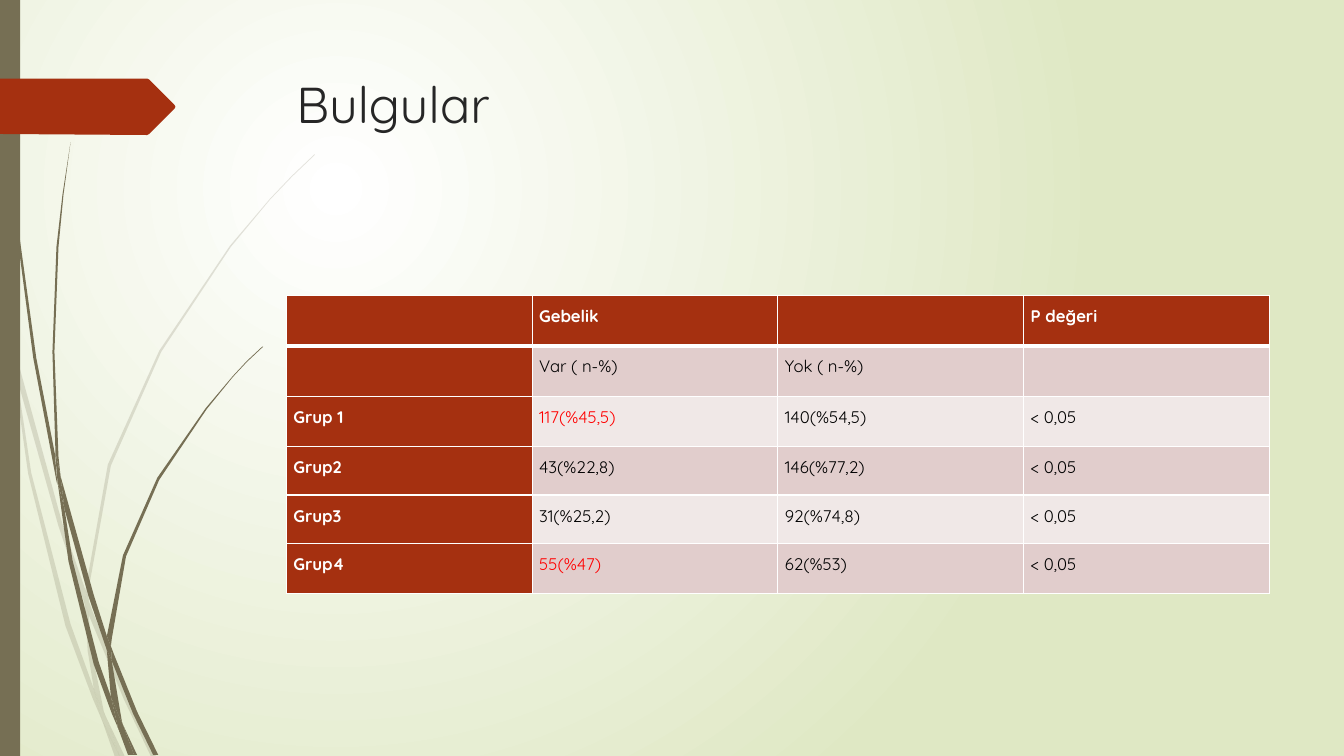
from dataclasses import dataclass

from lxml.etree import SubElement
from pptx import Presentation
from pptx.dml.color import RGBColor as RGB
from pptx.enum.shapes import MSO_SHAPE as Shape
from pptx.enum.text import MSO_ANCHOR as Anchor
from pptx.oxml.ns import qn
from pptx.util import Inches, Pt


@dataclass(frozen=True)
class Theme:
    """Colours, font and type sizes of the slide."""
    font: str = "Quicksand"
    title_size: int = 36
    table_size: int = 12
    olive: str = "766F54"
    rust: str = "A53010"
    title: str = "262626"
    white: str = "FFFFFF"
    black: str = "000000"
    red: str = "FF0000"
    backdrop: str = "DFE8C4"
    bands: tuple = ("F0E8E7", "E1CDCC")


THEME = Theme()

FAINT_GRASS = [
    [(0.11, 3.5), (0.09, 3.22), (0, 2.82), (0, 2.99), (0.1, 3.44)],
    [(0.58, 5.22), (0.84, 5.99), (0.85, 5.86), (0.62, 5.2), (0.14, 3.45), (0.17, 3.76)],
    [(0.92, 6.07), (0.88, 5.96), (0.88, 6.1), (1.23, 6.94), (1.5, 7.51), (1.55, 7.51),
     (1.27, 6.92)],
    [(1.19, 7.51), (1.24, 7.51), (1.05, 7.11)],
    [(0.93, 6.83), (0.7, 6.19), (0.31, 4.69), (0.17, 3.76), (0.11, 3.5), (0.28, 4.7),
     (0.65, 6.21), (0.92, 6.93), (1.01, 7.14), (0.99, 7.07)],
    [(0.84, 5.99), (0.87, 6.46), (0.93, 6.83), (0.96, 6.92), (1.05, 7.11), (1.03, 7.06),
     (0.91, 6.46), (0.88, 6.1), (0.88, 6.08)],
    [(0.88, 5.84), (1.1, 4.62), (1.6, 3.49), (2.29, 2.45), (2.68, 1.98), (2.9, 1.75),
     (3.12, 1.54), (3.12, 1.53), (2.89, 1.75), (2.68, 1.97), (2.28, 2.44), (1.58, 3.48),
     (1.07, 4.61), (0.85, 5.84), (0.85, 5.86), (0.88, 5.96)],
    [(1.01, 7.14), (1.14, 7.51), (1.19, 7.51)],
    [(0.88, 6.08), (0.88, 6.1), (0.88, 5.96), (0.85, 5.86), (0.84, 5.99)],
    [(0.96, 6.92), (0.93, 6.83), (0.99, 7.07), (1.01, 7.14), (1.19, 7.51), (1.05, 7.11)],
]
DARK_GRASS = [
    [(0.07, 1.1), (0.17, 2.33), (0.33, 3.55), (0.56, 4.77), (0.57, 4.81), (0.55, 4.57),
     (0.55, 4.53), (0.36, 3.55), (0.19, 2.32), (0.08, 1.09), (0.05, 0.48), (0.04, 0),
     (0.03, 0), (0.04, 0.48)],
    [(0.88, 5.92), (1.06, 6.45), (1.06, 6.31), (0.93, 5.9), (0.6, 4.72), (0.64, 5.05)],
    [(1.13, 6.49), (1.1, 6.41), (1.11, 6.56), (1.32, 7.08), (1.52, 7.49), (1.57, 7.49),
     (1.36, 7.06)],
    [(1.1, 6.91), (0.98, 6.57), (0.72, 5.56), (0.64, 5.05), (0.57, 4.77), (0.68, 5.57),
     (0.93, 6.59), (1.11, 7.08), (1.17, 7.22), (1.16, 7.17)],
    [(0.6, 4.72), (0.58, 4.53), (0.54, 3.49), (0.58, 2.45), (0.63, 1.93), (0.7, 1.41),
     (0.62, 1.93), (0.56, 2.45), (0.52, 3.49), (0.55, 4.49)],
    [(1.33, 7.49), (1.36, 7.49), (1.22, 7.19)],
    [(0.57, 4.77), (0.64, 5.05), (0.6, 4.72), (0.55, 4.49), (0.55, 4.53)],
    [(1.11, 6.33), (1.25, 5.52), (1.58, 4.76), (2.05, 4.06), (2.31, 3.74), (2.45, 3.59),
     (2.61, 3.44), (2.6, 3.44), (2.45, 3.58), (2.31, 3.73), (2.04, 4.05), (1.56, 4.74),
     (1.22, 5.51), (1.06, 6.31), (1.1, 6.41)],
    [(1.17, 7.22), (1.27, 7.49), (1.31, 7.49)],
    [(1.06, 6.45), (1.1, 6.91), (1.16, 7.06), (1.22, 7.19), (1.21, 7.16), (1.11, 6.56),
     (1.09, 6.51)],
    [(1.06, 6.45), (1.09, 6.51), (1.11, 6.56), (1.1, 6.41), (1.06, 6.31)],
    [(1.16, 7.06), (1.1, 6.91), (1.16, 7.17), (1.17, 7.22), (1.3, 7.49), (1.33, 7.49),
     (1.22, 7.19)],
]
ARROW = [(0, 0), (1.46, 0), (1.48, 0.01), (1.73, 0.26), (1.74, 0.28), (1.73, 0.3),
         (1.48, 0.55), (1.46, 0.56), (0, 0.55)]
RESULTS = [
    ["", "Gebelik", "", "P değeri"],
    ["", "Var ( n-%)", "Yok ( n-%)", ""],
    ["Grup 1", "117(%45,5)", "140(%54,5)", "< 0,05"],
    ["Grup2", "43(%22,8)", "146(%77,2)", "< 0,05"],
    ["Grup3", "31(%25,2)", "92(%74,8)", "< 0,05"],
    ["Grup4", "55(%47)", "62(%53)", "< 0,05"],
]
ROW_HEIGHTS = [0.5, 0.5, 0.5, 0.48, 0.48, 0.5]
HIGHLIGHTS = {(2, 1), (5, 1)}


def set_attributes(target, values):
    """Set every attribute named in a dict of format values."""
    for name, value in values.items():
        setattr(target, name, value)


def paint(shape, color):
    """Give a shape a plain fill without line or shadow."""
    shape.shadow.inherit = False
    shape.fill.solid()
    shape.fill.fore_color.rgb = RGB.from_string(color)
    shape.line.fill.background()


def write(paragraph, text, size, color, bold=False):
    """Add one formatted run to a paragraph."""
    run = paragraph.add_run()
    run.text = text
    set_attributes(run.font, {"name": THEME.font, "size": Pt(size), "bold": bold})
    run.font.color.rgb = RGB.from_string(color)


def add_outline(slide, left, top, points, color):
    """Draw a closed outline with its points measured from left and top."""
    corners = [(Inches(left + x), Inches(top + y)) for x, y in points]
    builder = slide.shapes.build_freeform(*corners[0])
    builder.add_line_segments(corners[1:], close=True)
    shape = builder.convert_to_shape()
    paint(shape, color)
    return shape


def add_grass(slide, left, top, blades, opacity=100):
    """Draw a tuft of grass as one group."""
    shapes = [add_outline(slide, left, top, blade, THEME.olive) for blade in blades]
    if opacity < 100:
        for shape in shapes:
            color = shape.element.spPr.find(qn("a:solidFill"))[0]
            SubElement(color, qn("a:alpha"), {"val": str(opacity * 1000)})
    slide.shapes.add_group_shape(shapes)


def add_backdrop(slide):
    """Fill the background with a circular gradient."""
    fill = slide.background.fill
    fill.gradient()
    for stop, position, color in zip(fill.gradient_stops, (0, 1), (THEME.white, THEME.backdrop)):
        stop.position = position
        stop.color.rgb = RGB.from_string(color)
    gradient = slide.element.find(".//" + qn("a:gradFill"))
    gradient.remove(gradient.find(qn("a:lin")))
    circle = SubElement(gradient, qn("a:path"), {"path": "circle"})
    SubElement(circle, qn("a:fillToRect"), {"l": "50000", "t": "50000", "r": "100000", "b": "100000"})


def add_side_decoration(slide, left, top, height):
    """Draw the grass, the side bar and the arrow on the left edge."""
    add_grass(slide, left, top, FAINT_GRASS, opacity=20)
    add_grass(slide, left, top, DARK_GRASS)
    bar = slide.shapes.add_shape(Shape.RECTANGLE, Inches(left), Inches(top), Inches(0.2), Inches(height))
    paint(bar, THEME.olive)
    add_outline(slide, left, top + 0.78, ARROW, THEME.rust)


def add_title(slide, left, top, width, height, text):
    """Write the slide title."""
    frame = slide.shapes.add_textbox(Inches(left), Inches(top), Inches(width), Inches(height)).text_frame
    set_attributes(frame, {"word_wrap": True, "vertical_anchor": Anchor.TOP})
    write(frame.paragraphs[0], text, THEME.title_size, THEME.title)


def add_borders(cell, widths):
    """Draw white cell borders from a dict of side and width in points."""
    properties = cell._tc.get_or_add_tcPr()
    for side, width in widths.items():
        line = SubElement(properties, qn(f"a:ln{side}"), {"w": str(Pt(width))})
        SubElement(SubElement(line, qn("a:solidFill")), qn("a:srgbClr"), {"val": THEME.white})


def add_results_table(slide, left, top, width):
    """Build the table of results with a red header row and column."""
    columns = len(RESULTS[0])
    table = slide.shapes.add_table(len(RESULTS), columns, Inches(left), Inches(top),
                                   Inches(width), Inches(sum(ROW_HEIGHTS))).table
    for column in table.columns:
        column.width = Inches(width / columns)
    for i, (row, height) in enumerate(zip(RESULTS, ROW_HEIGHTS)):
        table.rows[i].height = Inches(height)
        for j, text in enumerate(row):
            cell = table.cell(i, j)
            is_header = i == 0 or j == 0
            set_attributes(cell, {"margin_left": Inches(0.07), "margin_right": Inches(0.07),
                                  "margin_top": 0, "margin_bottom": 0})
            add_borders(cell, {"L": 1, "R": 1, "T": 3 if i == 1 else 1, "B": 3 if i == 0 else 1})
            cell.fill.solid()
            cell.fill.fore_color.rgb = RGB.from_string(THEME.rust if is_header else THEME.bands[i % 2])
            if text:
                color = THEME.red if (i, j) in HIGHLIGHTS else THEME.black
                paragraph = cell.text_frame.paragraphs[0]
                paragraph.line_spacing = 1.5
                write(paragraph, text, THEME.table_size, THEME.white if is_header else color, is_header)


def main():
    """Build the slide and save it."""
    presentation = Presentation()
    set_attributes(presentation, {"slide_width": Inches(13.33), "slide_height": Inches(7.5)})
    slide = presentation.slides.add_slide(presentation.slide_layouts[6])
    add_backdrop(slide)
    add_side_decoration(slide, 0, 0, 7.5)
    add_title(slide, 2.84, 0.68, 9.75, 1.4, "Bulgular")
    add_results_table(slide, 2.84, 2.93, 9.75)
    presentation.save("out.pptx")


if __name__ == "__main__":
    main()
